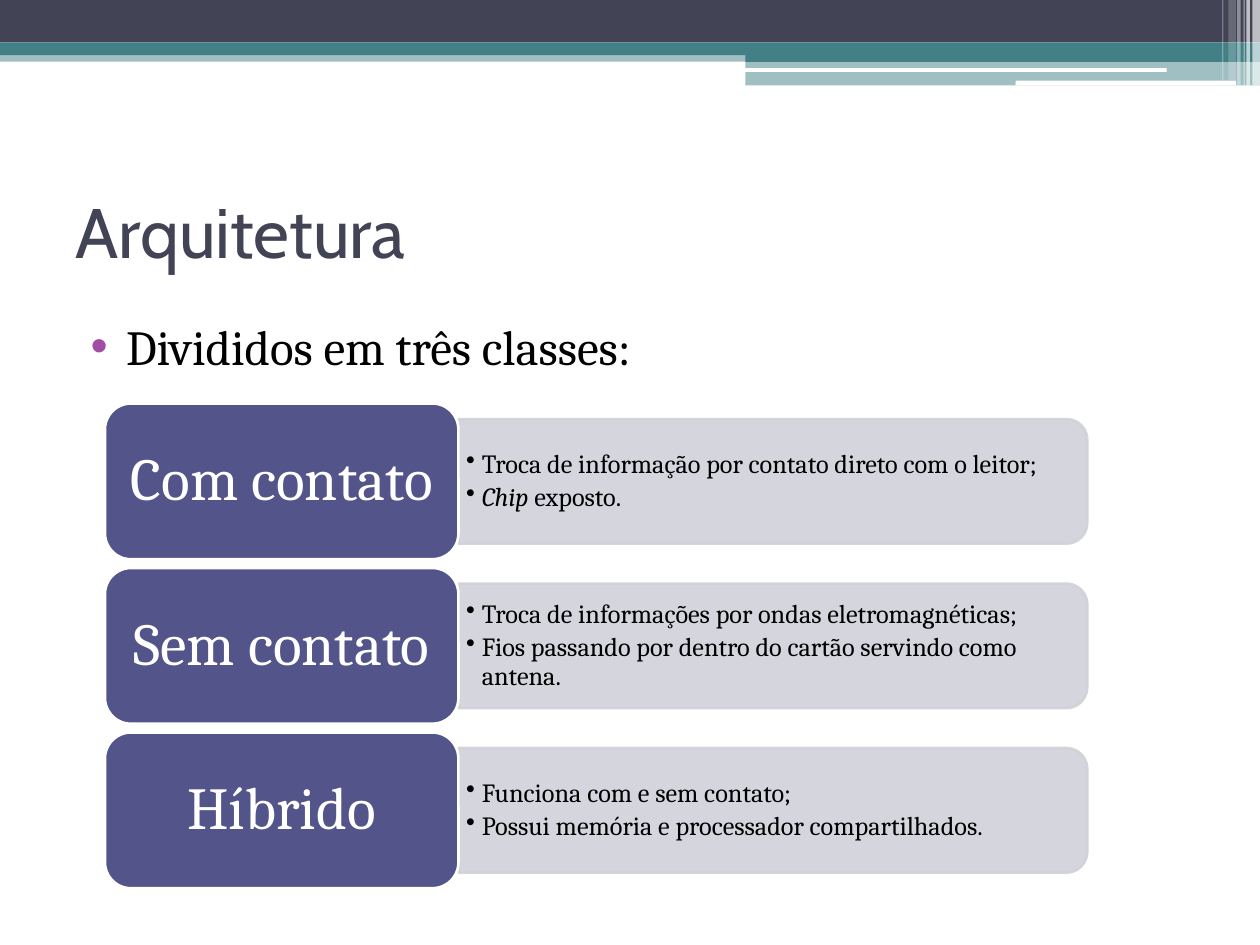
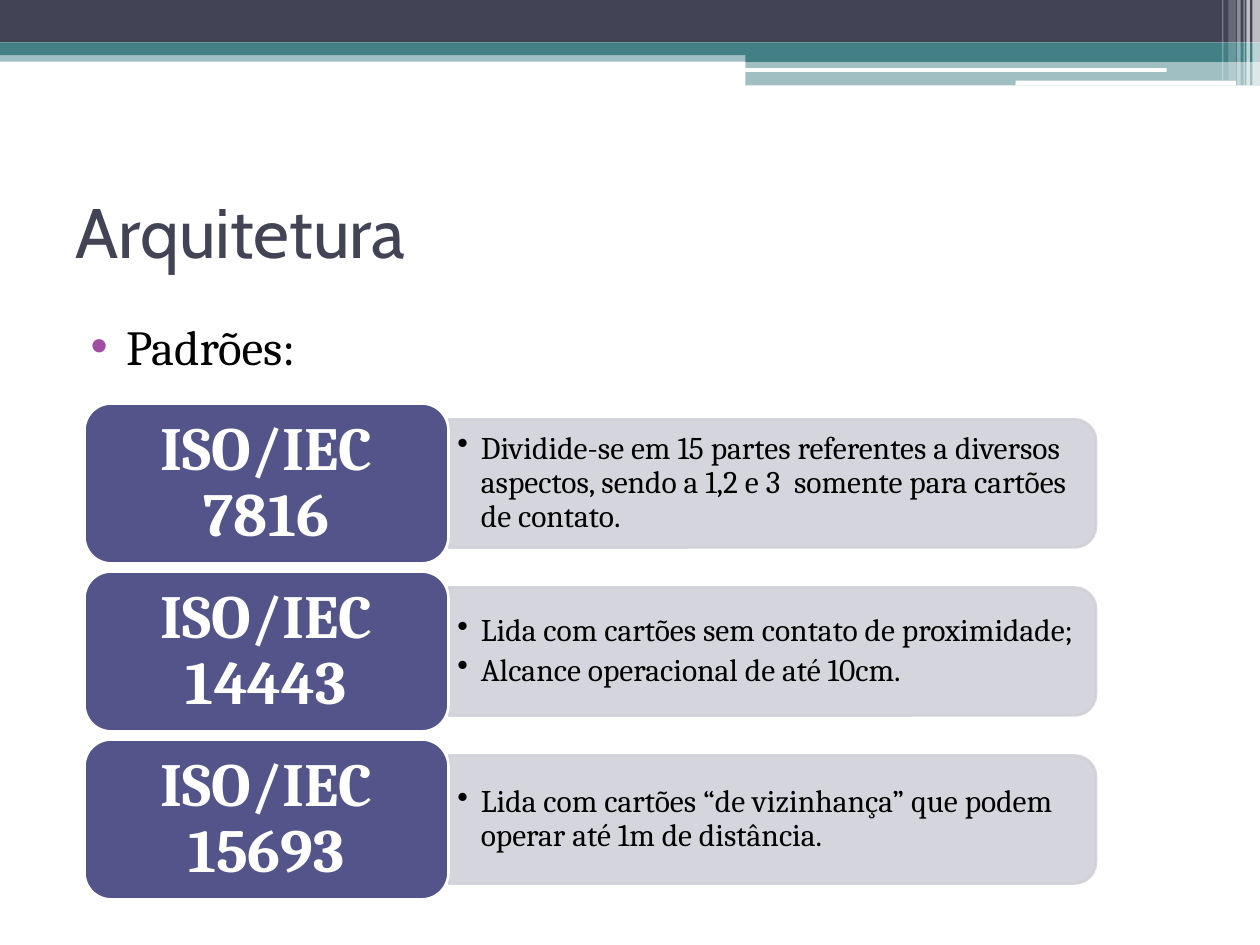
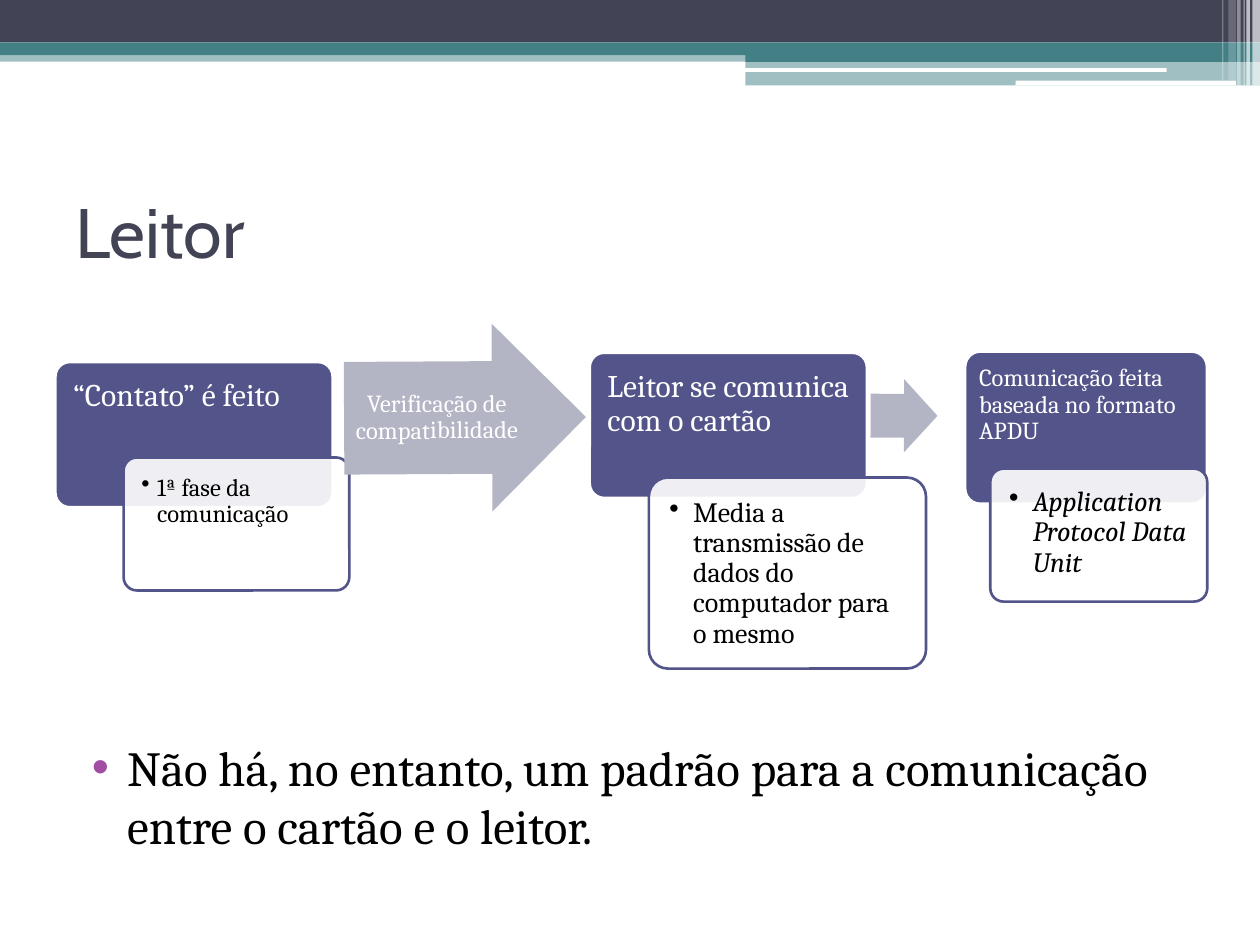
"""Build three slides on smart card architecture and card readers."""
from dataclasses import dataclass

from lxml import etree
from pptx import Presentation
from pptx.dml.color import RGBColor
from pptx.enum.shapes import MSO_SHAPE
from pptx.enum.text import MSO_ANCHOR, PP_ALIGN
from pptx.oxml.ns import qn
from pptx.presentation import Presentation as Deck
from pptx.shapes.autoshape import Shape
from pptx.slide import Slide
from pptx.text.text import TextFrame, _Paragraph as Paragraph
from pptx.util import Pt

RECTANGLE = MSO_SHAPE.RECTANGLE
ROUNDED = MSO_SHAPE.ROUNDED_RECTANGLE
TWO_ROUNDED = MSO_SHAPE.ROUND_2_SAME_RECTANGLE
RIGHT_ARROW = MSO_SHAPE.RIGHT_ARROW
TOP, MIDDLE = MSO_ANCHOR.TOP, MSO_ANCHOR.MIDDLE
LEFT, CENTER = PP_ALIGN.LEFT, PP_ALIGN.CENTER

COLORS = {
    "navy": "424456",
    "teal": "438086",
    "indigo": "53548A",
    "panel": "D1D1DA",
    "arrow": "B3B4C4",
    "bullet": "A04DA3",
    "white": "FFFFFF",
    "black": "000000",
}
TITLE_FONT, BODY_FONT = "Cabin", "Cambria"
LINE_WIDTH = 1.5
CORNER = 0.1
PANEL_RATIO = 0.8


@dataclass(frozen=True)
class Box:
    """A place and size in points."""

    left: float
    top: float
    width: float
    height: float


@dataclass(frozen=True)
class Band:
    """One strip of the header decoration."""

    box: Box
    color: str
    opacity: int = 100
    kind: int = RECTANGLE


@dataclass(frozen=True)
class Bullet:
    """A list item that may open with words in italics."""

    text: str
    italic_lead: str = ""


@dataclass(frozen=True)
class Row:
    """A label with the bullets shown beside it."""

    label: str
    bullets: tuple[Bullet, ...]


@dataclass(frozen=True)
class RowStyle:
    """Geometry and type sizes of a stack of rows."""

    first_label: Box
    pitch: float
    panel_width: float
    label_size: float
    label_bold: bool
    text_size: float
    indent: float
    inset: float


@dataclass(frozen=True)
class Step:
    """A reader step with a detail card overlapping it."""

    box: Box
    label: str
    label_size: float
    label_inset: float
    card: Box
    detail: Bullet
    detail_size: float
    indent: float
    card_inset: float


@dataclass(frozen=True)
class Arrow:
    """A block arrow between two steps."""

    box: Box
    rotation: float
    text: str = ""


BANDS = (
    Band(Box(0, 28.8, 720, 6.5), "teal", 50),
    Band(Box(0, 0, 720, 24.3), "navy"),
    Band(Box(0, 24.3, 720, 7.2), "teal"),
    Band(Box(426, 28.2, 294, 7.2), "teal"),
    Band(Box(426, 35.4, 294, 13.4), "teal", 50),
    Band(Box(425.5, 38.9, 241.2, 2.2), "white", 100, ROUNDED),
    Band(Box(580.3, 46.1, 126, 2.7), "white", 100, ROUNDED),
    Band(Box(715.7, 0, 4.3, 48.8), "white", 65),
    Band(Box(712.2, 0, 2, 48.8), "white", 65),
    Band(Box(710.6, 0, 0.7, 48.8), "white", 60),
    Band(Box(707, 0, 2, 48.8), "white", 40),
    Band(Box(702, 0, 4.3, 46), "white", 20),
    Band(Box(698.4, 0, 0.7, 46), "white", 30),
)
TITLE_BOX = Box(36, 90, 648, 84)
BODY_BOX = Box(36, 177, 648, 340)
NOTE_BOX = Box(36.7, 417.6, 648, 118)

CLASS_STYLE = RowStyle(Box(60, 230.6, 202, 89), 94, 359.3, 34, False, 15, 9, 4.3)
CLASS_ROWS = (
    Row("Com contato", (
        Bullet("Troca de informação por contato direto com o leitor;"),
        Bullet(" exposto.", "Chip"),
    )),
    Row("Sem contato", (
        Bullet("Troca de informações por ondas eletromagnéticas;"),
        Bullet("Fios passando por dentro do cartão servindo como antena."),
    )),
    Row("Híbrido", (
        Bullet("Funciona com e sem contato;"),
        Bullet("Possui memória e processador compartilhados."),
    )),
)

STANDARD_STYLE = RowStyle(Box(48.3, 230.6, 208, 91.4), 96, 370, 35, True, 18, 13.5, 5)
STANDARD_ROWS = (
    Row("ISO/IEC 7816", (
        Bullet("Dividide-se em 15 partes referentes a diversos aspectos, "
               "sendo a 1,2 e 3  somente para cartões de contato."),
    )),
    Row("ISO/IEC 14443", (
        Bullet("Lida com cartões sem contato de proximidade;"),
        Bullet("Alcance operacional de até 10cm."),
    )),
    Row("ISO/IEC 15693", (
        Bullet("Lida com cartões “de vizinhança” que podem operar até 1m de distância."),
    )),
)

READER_FLOW = (
    Step(Box(31.7, 206.9, 158.4, 83), "“Contato” é feito", 18, 7.7,
         Box(70.6, 261.4, 129, 76), Bullet("1ª fase da comunicação"), 14, 9, 7.9),
    Arrow(Box(196.6, 185, 138.2, 107.3), 359.7, "Verificação de compatibilidade"),
    Step(Box(337, 201.6, 158.4, 83), "Leitor se comunica com o cartão", 18, 7.7,
         Box(370.8, 272.9, 158.4, 109.2),
         Bullet("Media a transmissão de dados do computador para o mesmo"), 16, 13.5, 8.6),
    Arrow(Box(497.5, 216.7, 38.2, 41.8), 0.2),
    Step(Box(551.5, 200.9, 138.2, 87), "Comunicação feita baseada no formato APDU", 14, 5.4,
         Box(565.9, 267.8, 124, 76),
         Bullet("", "Application Protocol Data Unit"), 16, 13.5, 8.6),
)


def rgb(name: str) -> RGBColor:
    """Look up a palette colour."""
    return RGBColor.from_string(COLORS[name])


def place(shape: Shape, box: Box) -> None:
    """Move and size a shape."""
    shape.left, shape.top = Pt(box.left), Pt(box.top)
    shape.width, shape.height = Pt(box.width), Pt(box.height)


def add_box(slide: Slide, kind: int, box: Box, fill: str, opacity: int = 100,
            line: str = "", line_opacity: int = 100) -> Shape:
    """Add a flat preset shape with the given fill and outline."""
    shape = slide.shapes.add_shape(
        kind, Pt(box.left), Pt(box.top), Pt(box.width), Pt(box.height))
    shape.shadow.inherit = False
    shape.fill.solid()
    shape.fill.fore_color.rgb = rgb(fill)
    if line:
        shape.line.color.rgb = rgb(line)
        shape.line.width = Pt(LINE_WIDTH)
    else:
        shape.line.fill.background()
    for query, percent in (("a:solidFill/a:srgbClr", opacity),
                           ("a:ln/a:solidFill/a:srgbClr", line_opacity)):
        if percent < 100:
            for color in shape.element.spPr.xpath(query):
                etree.SubElement(color, qn("a:alpha"), val=str(percent * 1000))
    return shape


def set_frame(frame: TextFrame, anchor: int, horizontal: float, vertical: float) -> None:
    """Wrap a text frame and set its anchor and insets."""
    frame.word_wrap = True
    frame.vertical_anchor = anchor
    frame.margin_left = frame.margin_right = Pt(horizontal)
    frame.margin_top = frame.margin_bottom = Pt(vertical)


def set_font(paragraph: Paragraph, name: str, size: float, color: str,
             bold: bool = False) -> None:
    """Set the font of a whole paragraph."""
    font = paragraph.font
    font.name, font.size, font.bold = name, Pt(size), bold
    font.color.rgb = rgb(color)


def set_bullet(paragraph: Paragraph, margin: float, hanging: float, color: str) -> None:
    """Give a paragraph a hanging bullet."""
    properties = paragraph._p.get_or_add_pPr()
    properties.set("marL", str(Pt(margin)))
    properties.set("indent", str(-Pt(hanging)))
    bullet_color = etree.SubElement(properties, qn("a:buClr"))
    etree.SubElement(bullet_color, qn("a:srgbClr"), val=COLORS[color])
    etree.SubElement(properties, qn("a:buChar"), char="•")


def write_label(shape: Shape, text: str, size: float, alignment: int,
                bold: bool = False) -> None:
    """Write white text in a shape."""
    paragraph = shape.text_frame.paragraphs[0]
    paragraph.text = text
    paragraph.alignment = alignment
    paragraph.line_spacing = 0.9
    set_font(paragraph, BODY_FONT, size, "white", bold)


def write_bullets(frame: TextFrame, bullets: tuple[Bullet, ...], size: float,
                  indent: float) -> None:
    """Fill a text frame with small bullets."""
    for index, bullet in enumerate(bullets):
        paragraph = frame.add_paragraph() if index else frame.paragraphs[0]
        set_bullet(paragraph, indent, indent, "black")
        paragraph.alignment = LEFT
        paragraph.line_spacing = 0.9
        paragraph.space_after = Pt(round(0.18 * size, 2))
        set_font(paragraph, BODY_FONT, size, "black")
        if bullet.italic_lead:
            lead = paragraph.add_run()
            lead.text = bullet.italic_lead
            lead.font.italic = True
        if bullet.text:
            paragraph.add_run().text = bullet.text


def add_slide(presentation: Deck, title: str, body: str, body_box: Box) -> Slide:
    """Add a slide with its title and main bullet."""
    slide = presentation.slides.add_slide(presentation.slide_layouts[1])
    heading, content = slide.shapes.title, slide.placeholders[1]
    place(heading, TITLE_BOX)
    heading.text_frame.text = title
    heading.text_frame.vertical_anchor = MIDDLE
    paragraph = heading.text_frame.paragraphs[0]
    paragraph.alignment = LEFT
    set_font(paragraph, TITLE_FONT, 40, "navy")
    place(content, body_box)
    content.text_frame.text = body
    paragraph = content.text_frame.paragraphs[0]
    set_bullet(paragraph, 28.8, 20.2, "bullet")
    paragraph.space_before = Pt(3)
    set_font(paragraph, BODY_FONT, 28, "black")
    return slide


def add_bands_to_master(presentation: Deck, slide: Slide) -> None:
    """Draw the header bands and move them to the back of the master."""
    tree = presentation.slide_master.shapes.element
    for index, band in enumerate(BANDS):
        shape = add_box(slide, band.kind, band.box, band.color, band.opacity)
        tree.insert(2 + index, shape.element)


def draw_rows(slide: Slide, rows: tuple[Row, ...], style: RowStyle) -> None:
    """Draw a stack of labels with panels at their right."""
    first = style.first_label
    panel_left = first.left + first.width
    panel_height = PANEL_RATIO * first.height
    for index, row in enumerate(rows):
        top = first.top + index * style.pitch
        center_x = panel_left + style.panel_width / 2
        center_y = top + first.height / 2
        upright = Box(center_x - panel_height / 2, center_y - style.panel_width / 2,
                      panel_height, style.panel_width)
        panel = add_box(slide, TWO_ROUNDED, upright, "panel", 90, "panel", 90)
        panel.rotation = 90
        text_box = slide.shapes.add_textbox(
            Pt(panel_left), Pt(center_y - panel_height / 2 + 3),
            Pt(style.panel_width - 3.5), Pt(panel_height - 6))
        set_frame(text_box.text_frame, MIDDLE, style.inset, style.inset / 2)
        write_bullets(text_box.text_frame, row.bullets, style.text_size, style.indent)
        label = add_box(slide, ROUNDED, Box(first.left, top, first.width, first.height),
                        "indigo", line="white")
        set_frame(label.text_frame, MIDDLE, 10, 5)
        write_label(label, row.label, style.label_size, CENTER, style.label_bold)


def draw_step(slide: Slide, step: Step) -> None:
    """Draw a step and its detail card."""
    box = add_box(slide, ROUNDED, step.box, "indigo", line="white")
    set_frame(box.text_frame, TOP, step.label_inset, step.label_inset)
    write_label(box, step.label, step.label_size, LEFT)
    card = add_box(slide, ROUNDED, step.card, "white", 90, "indigo")
    set_frame(card.text_frame, TOP, step.card_inset, step.card_inset)
    write_bullets(card.text_frame, (step.detail,), step.detail_size, step.indent)
    for shape in (box, card):
        shape.adjustments[0] = CORNER


def draw_arrow(slide: Slide, arrow: Arrow) -> None:
    """Draw a block arrow with its optional text."""
    shape = add_box(slide, RIGHT_ARROW, arrow.box, "arrow")
    shape.adjustments[0], shape.adjustments[1] = 0.6, 0.5
    shape.rotation = arrow.rotation
    if arrow.text:
        set_frame(shape.text_frame, MIDDLE, 0, 0)
        write_label(shape, arrow.text, 14, CENTER)


def main() -> None:
    """Build and save the presentation."""
    presentation = Presentation()
    presentation.slide_width, presentation.slide_height = Pt(720), Pt(540)

    classes = add_slide(presentation, "Arquitetura", "Divididos em três classes:", BODY_BOX)
    add_bands_to_master(presentation, classes)
    draw_rows(classes, CLASS_ROWS, CLASS_STYLE)

    standards = add_slide(presentation, "Arquitetura", "Padrões:", BODY_BOX)
    draw_rows(standards, STANDARD_ROWS, STANDARD_STYLE)

    reader = add_slide(
        presentation, "Leitor",
        "Não há, no entanto, um padrão para a comunicação entre o cartão e o leitor.",
        NOTE_BOX)
    for item in READER_FLOW:
        if isinstance(item, Step):
            draw_step(reader, item)
        else:
            draw_arrow(reader, item)

    presentation.save("out.pptx")


if __name__ == "__main__":
    main()
